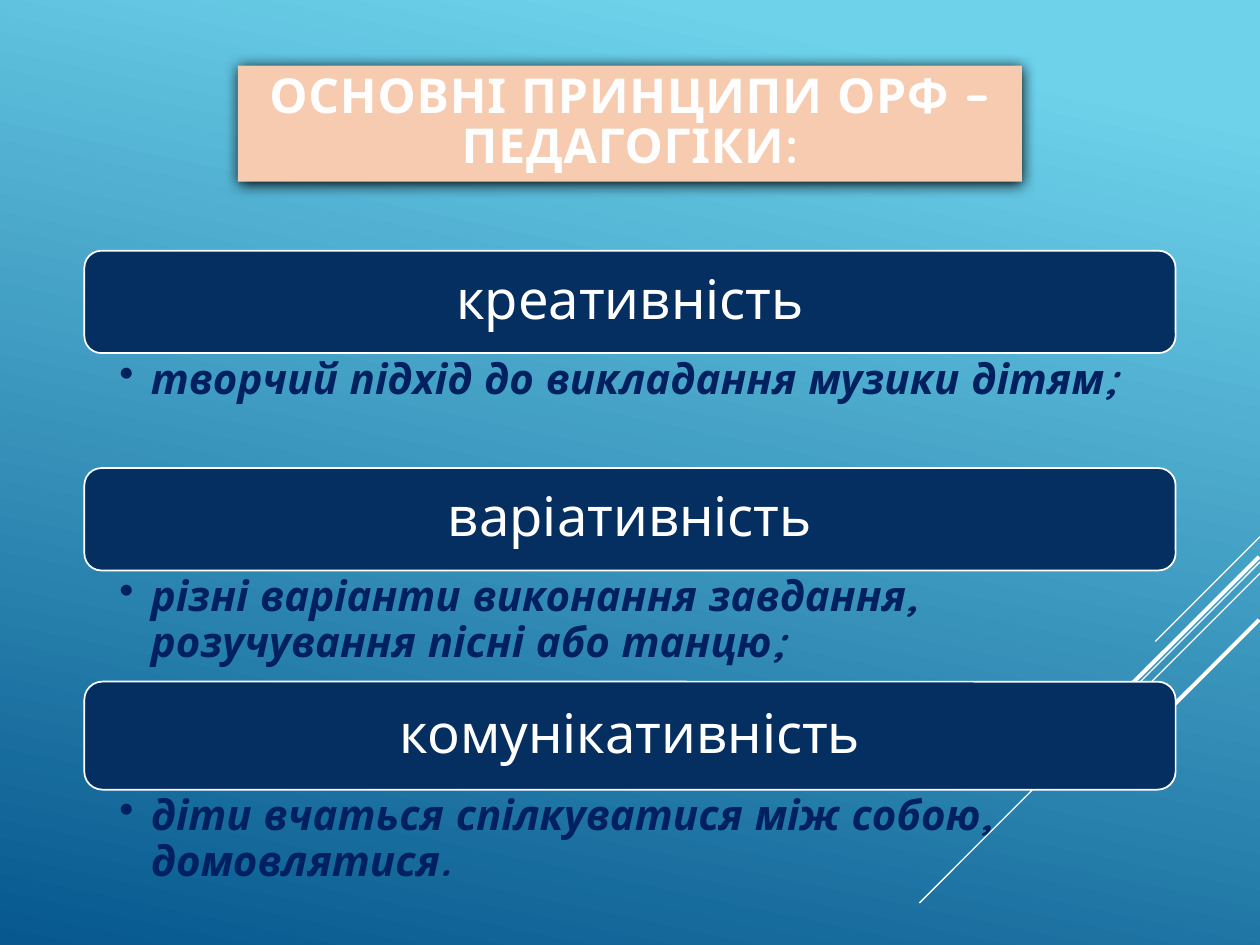
from typing import NamedTuple

from lxml.etree import SubElement
from pptx import Presentation
from pptx.dml.color import RGBColor
from pptx.enum.shapes import MSO_CONNECTOR, MSO_SHAPE
from pptx.enum.text import MSO_ANCHOR, PP_ALIGN
from pptx.oxml.ns import qn
from pptx.util import Pt

FONT = "Quicksand"
WHITE = "FFFFFF"
NAVY = "052F61"
CARD_LEFT = 48.2
CARD_WIDTH = 623.6


class Ray(NamedTuple):
    start: tuple[float, float]
    end: tuple[float, float]
    weight: float


class Principle(NamedTuple):
    name: str
    detail: str
    top: float
    height: float
    detail_height: float


RAYS = [
    Ray((720, 306.7), (660.2, 366.5), 0.75),
    Ray((720, 321.1), (525.4, 516), 0.75),
    Ray((720, 327.6), (596.2, 451.4), 0.75),
    Ray((719.5, 318.2), (606.2, 431.3), 2.25),
    Ray((719.5, 354.2), (637.2, 436.3), 2.25),
]

PRINCIPLES = [
    Principle("креативність", "творчий підхід до викладання музики дітям;",
              143.3, 58.5, 65.5),
    Principle("варіативність", "різні варіанти виконання завдання, розучування пісні або танцю;",
              267.5, 58.5, 59),
    Principle("комунікативність", "діти вчаться спілкуватися між собою, домовлятися.",
              389.5, 61.7, 57),
]


def color(value: str) -> RGBColor:
    return RGBColor.from_string(value)


def add_shadow(properties, blur: float, distance: float, opacity: int) -> None:
    effects = SubElement(properties, qn("a:effectLst"))
    shadow = SubElement(effects, qn("a:outerShdw"), blurRad=str(Pt(blur)),
                        dist=str(Pt(distance)), dir="5400000", algn="ctr", rotWithShape="0")
    tone = SubElement(shadow, qn("a:srgbClr"), val="000000")
    SubElement(tone, qn("a:alpha"), val=str(opacity * 1000))


def set_margins(frame, left: float, top: float, right: float, bottom: float) -> None:
    frame.margin_left, frame.margin_top = Pt(left), Pt(top)
    frame.margin_right, frame.margin_bottom = Pt(right), Pt(bottom)


def write(frame, text: str, size: float, hue: str, spacing: float):
    frame.word_wrap = True
    para = frame.paragraphs[0]
    para.text = text
    para.line_spacing = spacing
    para.font.name = FONT
    para.font.size = Pt(size)
    para.font.color.rgb = color(hue)
    return para


def paint_background(page) -> None:
    fill = page.background.fill
    fill.gradient()
    fill.gradient_angle = 258
    for stop, position, hue in zip(fill.gradient_stops, (0.1, 1), ("6ED2EB", "06588E")):
        stop.position = position
        stop.color.rgb = color(hue)


def add_ray(page, ray: Ray) -> None:
    line = page.shapes.add_connector(
        MSO_CONNECTOR.STRAIGHT, *(Pt(value) for value in ray.start + ray.end))
    line.line.color.rgb = color(WHITE)
    line.line.width = Pt(ray.weight)
    SubElement(line._element.spPr, qn("a:effectLst"))


def add_title(page, text: str) -> None:
    box = page.shapes.add_shape(MSO_SHAPE.RECTANGLE, Pt(136), Pt(37.5), Pt(448), Pt(66.4))
    box.fill.solid()
    box.fill.fore_color.rgb = color("F6CBAF")
    box.line.fill.background()
    add_shadow(box._element.spPr, 8.5, 1, 100)
    frame = box.text_frame
    frame.vertical_anchor = MSO_ANCHOR.MIDDLE
    para = write(frame, text, 27.5, "FEFEFE", 0.87)
    para.alignment = PP_ALIGN.CENTER
    para.font.bold = True
    span = para.runs[0].font._element
    span.set("spc", "50")
    add_shadow(span, 3, 1.5, 40)


def add_principle(page, item: Principle) -> None:
    card = page.shapes.add_shape(MSO_SHAPE.ROUNDED_RECTANGLE, Pt(CARD_LEFT), Pt(item.top),
                                 Pt(CARD_WIDTH), Pt(item.height))
    card.shadow.inherit = False
    card.fill.solid()
    card.fill.fore_color.rgb = color(NAVY)
    card.line.color.rgb = color(WHITE)
    card.line.width = Pt(1)
    card.text_frame.vertical_anchor = MSO_ANCHOR.MIDDLE
    set_margins(card.text_frame, 9.3, 9.3, 9.3, 9.3)
    write(card.text_frame, item.name, 31, WHITE, 0.9).alignment = PP_ALIGN.CENTER

    box = page.shapes.add_textbox(Pt(CARD_LEFT), Pt(item.top + item.height),
                                  Pt(CARD_WIDTH), Pt(item.detail_height))
    set_margins(box.text_frame, 20, 2.8, 16, 2.8)
    para = write(box.text_frame, item.detail, 24, "002060", 0.9)
    para.font.bold = True
    para.font.italic = True
    properties = para._p.get_or_add_pPr()
    properties.set("marL", str(Pt(18)))
    properties.set("indent", str(-Pt(18)))
    bullet = properties.makeelement(qn("a:buChar"), {"char": "•"})
    properties.find(qn("a:defRPr")).addprevious(bullet)


def main() -> None:
    deck = Presentation()
    deck.slide_width, deck.slide_height = Pt(720), Pt(540)
    page = deck.slides.add_slide(deck.slide_layouts[6])
    paint_background(page)
    for ray in RAYS:
        add_ray(page, ray)
    add_title(page, "ОСНОВНІ ПРИНЦИПИ ОРФ – ПЕДАГОГІКИ:")
    for item in PRINCIPLES:
        add_principle(page, item)
    deck.save("out.pptx")


if __name__ == "__main__":
    main()
